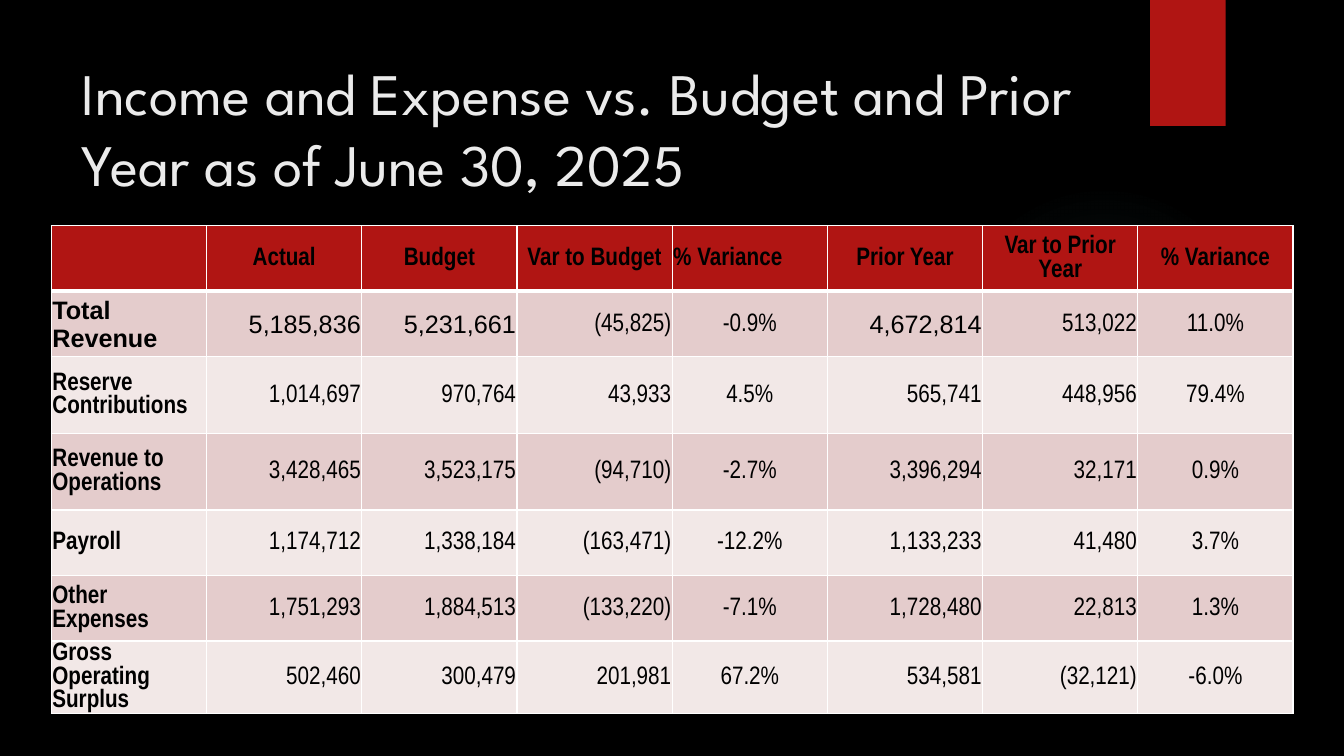
from dataclasses import dataclass
from typing import Any

from lxml.etree import SubElement
from pptx import Presentation
from pptx.dml.color import RGBColor
from pptx.enum.shapes import MSO_SHAPE
from pptx.enum.text import MSO_ANCHOR, MSO_AUTO_SIZE, PP_ALIGN
from pptx.oxml.ns import qn
from pptx.util import Emu, Inches, Pt

GRID_COLUMNS, GRID_ROWS = 160, 90
GRID_UNIT = Inches(7.5) / GRID_ROWS

COLORS = {
    "background": "000000",
    "accent": "B01513",
    "glow": "50B9C1",
    "title": "EBEBEB",
    "ink": "000000",
    "border": "FFFFFF",
    "odd_row": "E4CCCC",
    "even_row": "F2E8E7",
}

HEADINGS = ["", "Actual", "Budget", "Var to Budget", "% Variance",
            "Prior Year", "Var to Prior Year", "% Variance"]
PERCENT_COLUMNS = {4, 7}
ARIAL_COLUMNS = {0, 1, 2, 5}


@dataclass(frozen=True)
class Area:
    column: float
    row: float
    columns: float
    rows: float

    def box(self) -> tuple[Emu, ...]:
        return tuple(grid(n) for n in (self.column, self.row, self.columns, self.rows))


@dataclass(frozen=True)
class Account:
    label: str
    figures: tuple[str, ...]
    rows: float = 7.8
    first_font: str = "Arial Narrow"


ACCOUNTS = [
    Account("Total Revenue", ("5,185,836", "5,231,661", "(45,825)", "-0.9%",
                              "4,672,814", "513,022", "11.0%"), first_font="Arial"),
    Account("Reserve Contributions", ("1,014,697", "970,764", "43,933", "4.5%",
                                      "565,741", "448,956", "79.4%"), rows=9.12),
    Account("Revenue to Operations", ("3,428,465", "3,523,175", "(94,710)", "-2.7%",
                                      "3,396,294", "32,171", "0.9%"), rows=9.12),
    Account("Payroll", ("1,174,712", "1,338,184", "(163,471)", "-12.2%",
                        "1,133,233", "41,480", "3.7%")),
    Account("Other Expenses", ("1,751,293", "1,884,513", "(133,220)", "-7.1%",
                               "1,728,480", "22,813", "1.3%")),
    Account("Gross Operating Surplus", ("502,460", "300,479", "201,981", "67.2%",
                                        "534,581", "(32,121)", "-6.0%")),
]

GLOW_AREA = Area(112.92, 21.96, 36.96, 36.96)
RIBBON_AREA = Area(136.92, 0, 9, 15)
TITLE_AREA = Area(8.52, 6, 123.48, 18.36)
HEADER_ROWS = 7.8
TABLE_AREA = Area(6.12, 26.88, 18.48 * len(HEADINGS),
                  HEADER_ROWS + sum(account.rows for account in ACCOUNTS))


def grid(count: float) -> Emu:
    return Emu(round(count * GRID_UNIT))


def rgb(name: str) -> RGBColor:
    return RGBColor.from_string(COLORS[name])


def apply_format(target: Any, values: dict[str, Any]) -> None:
    for attribute, value in values.items():
        setattr(target, attribute, value)


def add_color(parent: Any, name: str, alpha: int = 100) -> None:
    color = SubElement(parent, qn("a:srgbClr"), val=COLORS[name])
    SubElement(color, qn("a:alpha"), val=str(alpha * 1000))


def add_ornament(slide: Any, kind: MSO_SHAPE, area: Area) -> Any:
    ornament = slide.shapes.add_shape(kind, *area.box())
    ornament.line.fill.background()
    return ornament


def add_glow(slide: Any) -> None:
    glow = add_ornament(slide, MSO_SHAPE.OVAL, GLOW_AREA)
    glow.shadow.inherit = False
    glow.fill.gradient()
    gradient = glow._element.spPr.find(qn("a:gradFill"))
    for child in list(gradient):
        gradient.remove(child)
    stops = SubElement(gradient, qn("a:gsLst"))
    for position, alpha in ((0, 7), (36, 6), (69, 0)):
        add_color(SubElement(stops, qn("a:gs"), pos=str(position * 1000)), "glow", alpha)
    focus = SubElement(gradient, qn("a:path"), path="circle")
    SubElement(focus, qn("a:fillToRect"), {side: "50000" for side in "ltrb"})


def add_ribbon(slide: Any) -> None:
    ribbon = add_ornament(slide, MSO_SHAPE.RECTANGLE, RIBBON_AREA)
    ribbon.fill.solid()
    ribbon.fill.fore_color.rgb = rgb("accent")
    ribbon.shadow.inherit = False
    effects = ribbon._element.spPr.find(qn("a:effectLst"))
    shadow = SubElement(effects, qn("a:outerShdw"), blurRad=str(Pt(3)),
                        dist=str(Pt(2)), dir="5400000", rotWithShape="0")
    add_color(shadow, "ink", 45)


def place_title(slide: Any) -> None:
    title = slide.shapes.title
    slide.shapes._spTree.append(title._element)
    apply_format(title, dict(zip(("left", "top", "width", "height"), TITLE_AREA.box())))
    frame = title.text_frame
    frame.text = "Income and Expense vs. Budget and Prior Year as of June 30, 2025"
    apply_format(frame, {"word_wrap": True, "auto_size": MSO_AUTO_SIZE.NONE,
                         "vertical_anchor": MSO_ANCHOR.MIDDLE})
    heading = frame.paragraphs[0]
    apply_format(heading, {"alignment": PP_ALIGN.LEFT, "line_spacing": 1.0})
    apply_format(heading.font, {"name": "League Spartan", "size": Pt(42)})
    heading.font.color.rgb = rgb("title")


def add_borders(cell: Any, row: int) -> None:
    heavy = {0: "B", 1: "T"}.get(row)
    for side in "LRTB":
        width = Pt(3 if side == heavy else 1)
        border = SubElement(cell._tc.get_or_add_tcPr(), qn(f"a:ln{side}"), w=str(width))
        add_color(SubElement(border, qn("a:solidFill")), "border")


def cell_alignment(row: int, column: int) -> PP_ALIGN:
    if column == 0 or (row, column) == (0, 4):
        return PP_ALIGN.LEFT
    if row == 0 or column in PERCENT_COLUMNS:
        return PP_ALIGN.CENTER
    return PP_ALIGN.RIGHT


def fill_cell(cell: Any, row: int, column: int, wording: str, font_name: str) -> None:
    add_borders(cell, row)
    cell.fill.solid()
    band = "odd_row" if row % 2 else "even_row"
    cell.fill.fore_color.rgb = rgb("accent" if row == 0 else band)
    apply_format(cell, {"vertical_anchor": MSO_ANCHOR.MIDDLE, "margin_left": Inches(0.01),
                        "margin_top": Inches(0.01), "margin_right": Inches(0.01),
                        "margin_bottom": 0})
    cell.text = wording
    entry = cell.text_frame.paragraphs[0]
    entry.alignment = cell_alignment(row, column)
    apply_format(entry.font, {"name": font_name, "size": Pt(18),
                              "bold": row == 0 or column == 0})
    entry.font.color.rgb = rgb("ink")


def add_statement(slide: Any) -> None:
    records = [Account(HEADINGS[0], tuple(HEADINGS[1:]), HEADER_ROWS), *ACCOUNTS]
    statement = slide.shapes.add_table(len(records), len(HEADINGS), *TABLE_AREA.box()).table
    statement.horz_banding = False
    for row, record in enumerate(records):
        statement.rows[row].height = grid(record.rows)
        for column, wording in enumerate((record.label, *record.figures)):
            font_name = record.first_font if column in ARIAL_COLUMNS else "Arial Narrow"
            fill_cell(statement.cell(row, column), row, column, wording, font_name)


def main() -> None:
    deck = Presentation()
    apply_format(deck, {"slide_width": grid(GRID_COLUMNS), "slide_height": grid(GRID_ROWS)})
    slide = deck.slides.add_slide(deck.slide_layouts[5])
    slide.background.fill.solid()
    slide.background.fill.fore_color.rgb = rgb("background")
    add_glow(slide)
    add_ribbon(slide)
    place_title(slide)
    add_statement(slide)
    deck.save("out.pptx")


if __name__ == "__main__":
    main()
